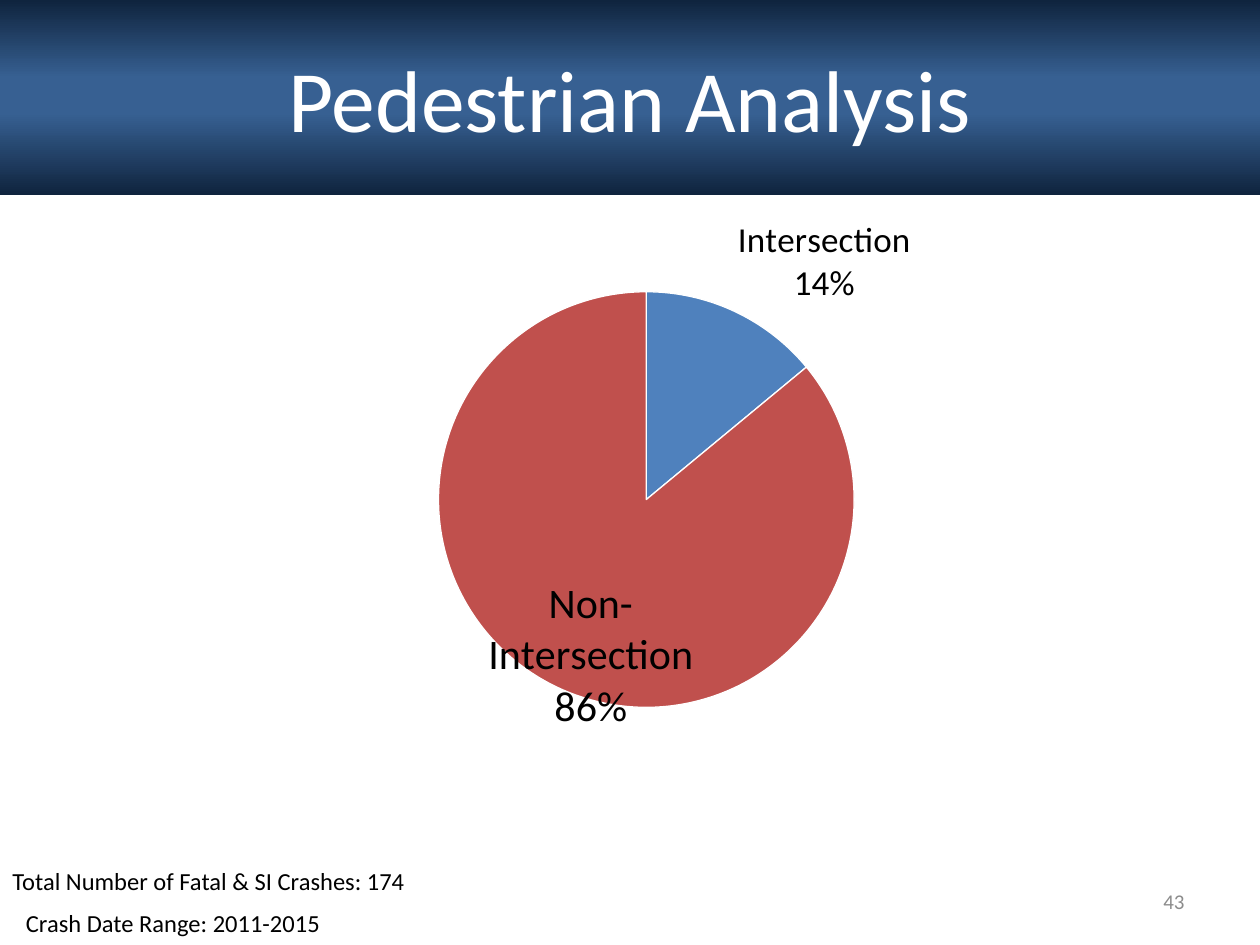
from lxml import etree
from pptx import Presentation
from pptx import util as u
from pptx.chart.data import CategoryChartData
from pptx.dml.color import RGBColor
from pptx.enum import chart as ch, text
from pptx.oxml import parse_xml
from pptx.oxml.ns import nsdecls, qn

FONT = "Calibri"


def px(n):
    return u.Emu(round(n * 914400 / 126))


def color(value):
    return RGBColor.from_string(value)


def style(font, size, value):
    font.name = FONT
    font.size = u.Pt(size)
    font.color.rgb = color(value)


def place(sp, box):
    sp.left, sp.top, sp.width, sp.height = [px(n) for n in box]


def write(sp, words, size, value, align, anchor):
    tf = sp.text_frame
    tf.word_wrap = True
    tf.vertical_anchor = anchor
    p = tf.paragraphs[0]
    p.alignment = align
    r = p.add_run()
    r.text = words
    style(r.font, size, value)


def banner(s, box, words):
    sp = s.shapes.title
    place(sp, box)
    stops = [(0, "0F243E"), (40, "376092"), (58, "376092"), (100, "0F243E")]
    gs = "".join(
        f'<a:gs pos="{pos * 1000}"><a:srgbClr val="{value}"/></a:gs>'
        for pos, value in stops
    )
    geom = parse_xml(f'<a:prstGeom {nsdecls("a")} prst="rect"><a:avLst/></a:prstGeom>')
    fill = parse_xml(
        f'<a:gradFill {nsdecls("a")} rotWithShape="1"><a:gsLst>{gs}</a:gsLst>'
        '<a:lin ang="5400000" scaled="0"/></a:gradFill>'
    )
    sp._element.spPr.extend([geom, fill])
    write(sp, words, 50, "FFFFFF", text.PP_ALIGN.CENTER, text.MSO_ANCHOR.MIDDLE)


def manual_layout(x, y, w=None, h=None):
    sizes = ""
    modes = ""
    target = ""
    if w is not None:
        target = '<c:layoutTarget val="inner"/>'
        modes = '<c:xMode val="edge"/><c:yMode val="edge"/>'
        sizes = f'<c:w val="{w:.3f}"/><c:h val="{h:.3f}"/>'
    return parse_xml(
        f'<c:layout {nsdecls("c")}><c:manualLayout>{target}{modes}'
        f'<c:x val="{x:.3f}"/><c:y val="{y:.3f}"/>{sizes}</c:manualLayout></c:layout>'
    )


def label_point(point, size, shift):
    label = point.data_label
    style(label.font, size, "000000")
    label.position = ch.XL_LABEL_POSITION.OUTSIDE_END
    dlbl = label._dLbl
    for tag, val in [("showVal", "0"), ("showCatName", "1"), ("showPercent", "1")]:
        dlbl.find(qn(f"c:{tag}")).set("val", val)
    separator = etree.SubElement(dlbl, qn("c:separator"))
    separator.text = "\n"
    if shift:
        dlbl.find(qn("c:idx")).addnext(manual_layout(*shift))


def crash_pie(s, box):
    left, top, width, height = box
    data = CategoryChartData()
    data.categories = ["Intersection", "Non-Intersection"]
    data.add_series("Series 1", [14, 86])
    frame = s.shapes.add_chart(
        ch.XL_CHART_TYPE.PIE, *[px(n) for n in box], data
    )
    chart = frame.chart
    chart.has_legend = False
    chart.has_title = False
    style(chart.font, 18, "000000")
    plot = chart.plots[0]
    plot.vary_by_categories = True
    slices = [("4F81BD", 20, None), ("C0504D", 24, (0.11, -0.17))]
    for i, (value, size, shift) in enumerate(slices):
        point = plot.series[0].points[i]
        point.format.fill.solid()
        point.format.fill.fore_color.rgb = color(value)
        point.format.line.color.rgb = color("FFFFFF")
        point.format.line.width = u.Pt(0.75)
        label_point(point, size, shift)
    area = chart._chartSpace.chart.plotArea
    for old in area.findall(qn("c:layout")):
        area.remove(old)
    diameter = 416
    area.insert(0, manual_layout(
        438 / width, 97 / height, diameter / width, diameter / height
    ))


def note(s, box, words, size=14, value="000000",
         align=text.PP_ALIGN.LEFT, anchor=text.MSO_ANCHOR.TOP):
    sp = s.shapes.add_textbox(*[px(n) for n in box])
    write(sp, words, size, value, align, anchor)


def main():
    prs = Presentation()
    prs.slide_width, prs.slide_height = px(1260), px(945)
    s = prs.slides.add_slide(prs.slide_layouts[5])
    banner(s, (0, 0, 1260, 195), "Pedestrian Analysis")
    note(s, (903, 876, 294, 50), "43", 12, "8C8C8C",
         text.PP_ALIGN.RIGHT, text.MSO_ANCHOR.MIDDLE)
    note(s, (0, 902, 346, 43), "Crash Date Range: 2011-2015",
         align=text.PP_ALIGN.CENTER)
    note(s, (0, 860, 420, 43), "Total Number of Fatal & SI Crashes: 174")
    crash_pie(s, (0, 195, 1260, 677))
    prs.save("out.pptx")


if __name__ == "__main__":
    main()
